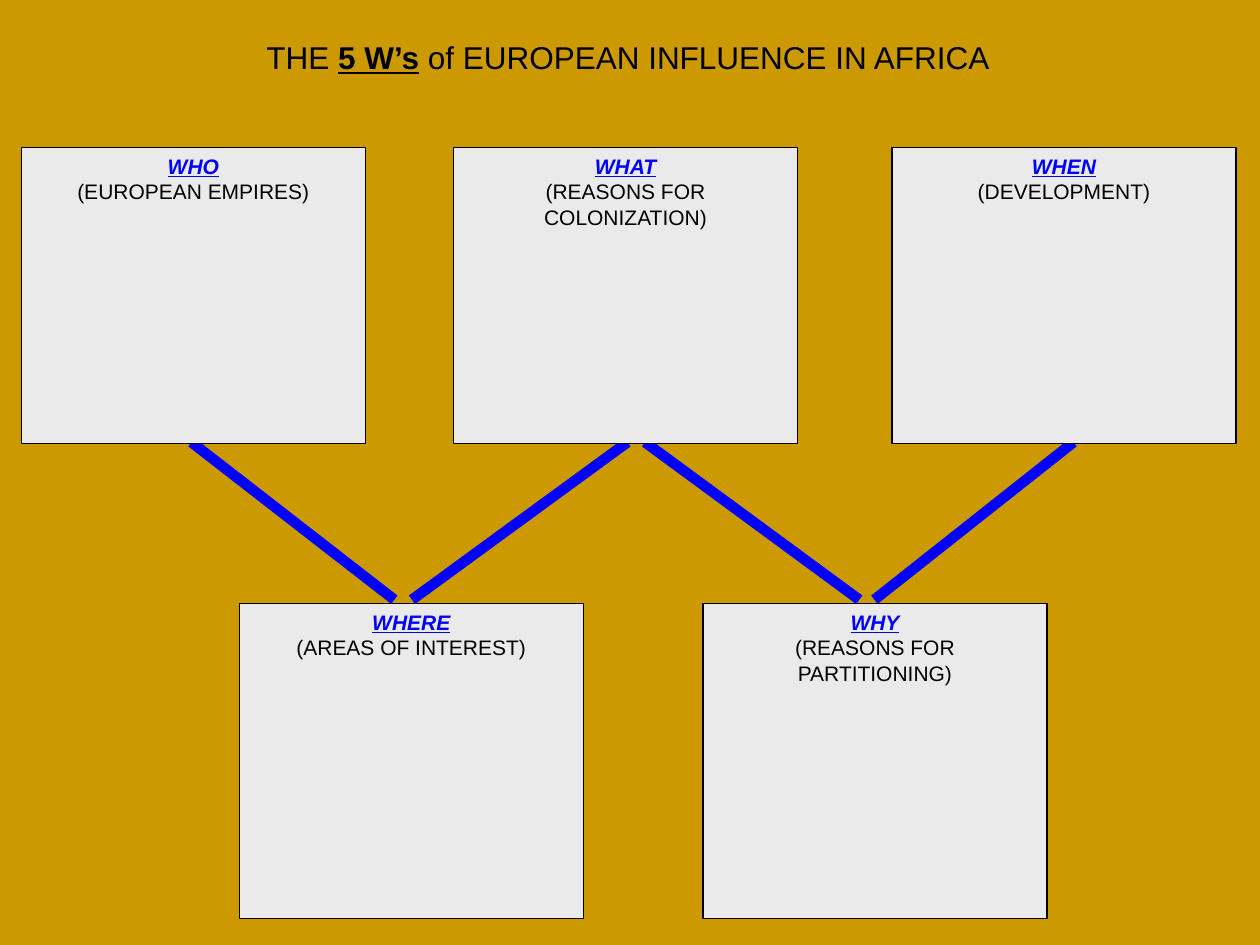
from pptx import Presentation
from pptx.dml.color import RGBColor
from pptx.enum.shapes import MSO_CONNECTOR, MSO_SHAPE
from pptx.enum.text import MSO_ANCHOR, MSO_AUTO_SIZE, PP_ALIGN
from pptx.oxml.ns import qn
from pptx.util import Inches, Pt
from lxml import etree

RECT, LINE = MSO_SHAPE.RECTANGLE, MSO_CONNECTOR.STRAIGHT
TOP, MIDDLE = MSO_ANCHOR.TOP, MSO_ANCHOR.MIDDLE
CENTER, FIT = PP_ALIGN.CENTER, MSO_AUTO_SIZE.SHAPE_TO_FIT_TEXT

GOLD, GRAY, BLUE, BLACK = "CC9900", "EAEAEA", "0000FF", "000000"
PLAIN = {"name": "Arial", "size": Pt(12), "bold": False, "italic": False, "underline": False}
HEAD = {**PLAIN, "bold": True, "italic": True, "underline": True}
TITLE = {**PLAIN, "size": Pt(18)}
STRONG = {**TITLE, "bold": True, "underline": True}

title = [
    ("THE ", TITLE),
    ("5 W’s", STRONG),
    (" of EUROPEAN INFLUENCE IN AFRICA", TITLE),
]
# top, height, boxes as (left, heading, note)
lower = (4.79, 2.5, [
    (1.9, "WHERE", "(AREAS OF INTEREST)"),
    (5.58, "WHY", "(REASONS FOR PARTITIONING)"),
])
upper = (1.17, 2.35, [
    (0.17, "WHO", "(EUROPEAN EMPIRES)"),
    (3.6, "WHAT", "(REASONS FOR COLONIZATION)"),
    (7.08, "WHEN", "(DEVELOPMENT)"),
])
WIDE = 2.73
# x at the upper row, x at the lower row
links = [(1.52, 3.13), (4.98, 3.27), (5.12, 6.82), (8.52, 6.94)]
LINK_TOP, LINK_END = 3.51, 4.76


def color(code):
    return RGBColor.from_string(code)


def add_run(para, text, style, code=BLACK):
    run = para.add_run()
    run.text = text
    for key, value in style.items():
        setattr(run.font, key, value)
    run.font.color.rgb = color(code)


def add_row(shapes, row):
    top, height, boxes = row
    for left, head, note in boxes:
        box = shapes.add_shape(RECT, *map(Inches, (left, top, WIDE, height)))
        box.shadow.inherit = False
        box.fill.solid()
        box.fill.fore_color.rgb = color(GRAY)
        box.line.color.rgb = color(BLACK)
        box.line.width = Pt(0.75)
        frame = box.text_frame
        frame.word_wrap = True
        frame.vertical_anchor = TOP
        first, second = frame.paragraphs[0], frame.add_paragraph()
        first.alignment = second.alignment = CENTER
        add_run(first, head, HEAD, BLUE)
        add_run(second, note, PLAIN)


def add_links(shapes):
    for start, end in links:
        link = shapes.add_connector(
            LINE, *map(Inches, (start, LINK_TOP, end, LINK_END)))
        link.line.color.rgb = color(BLUE)
        link.line.width = Pt(6)
        etree.SubElement(link._element.spPr, qn("a:effectLst"))


def add_title(shapes):
    box = shapes.add_textbox(*map(Inches, (2, 0.25, 5.97, 0.4)))
    frame = box.text_frame
    frame.word_wrap = False
    frame.auto_size = FIT
    frame.vertical_anchor = MIDDLE
    para = frame.paragraphs[0]
    para.alignment = CENTER
    for text, style in title:
        add_run(para, text, style)


def main():
    deck = Presentation()
    deck.slide_width, deck.slide_height = Inches(10), Inches(7.5)
    slide = deck.slides.add_slide(deck.slide_layouts[6])
    slide.background.fill.solid()
    slide.background.fill.fore_color.rgb = color(GOLD)
    add_row(slide.shapes, lower)
    add_links(slide.shapes)
    add_row(slide.shapes, upper)
    add_title(slide.shapes)
    deck.save("out.pptx")


if __name__ == "__main__":
    main()
